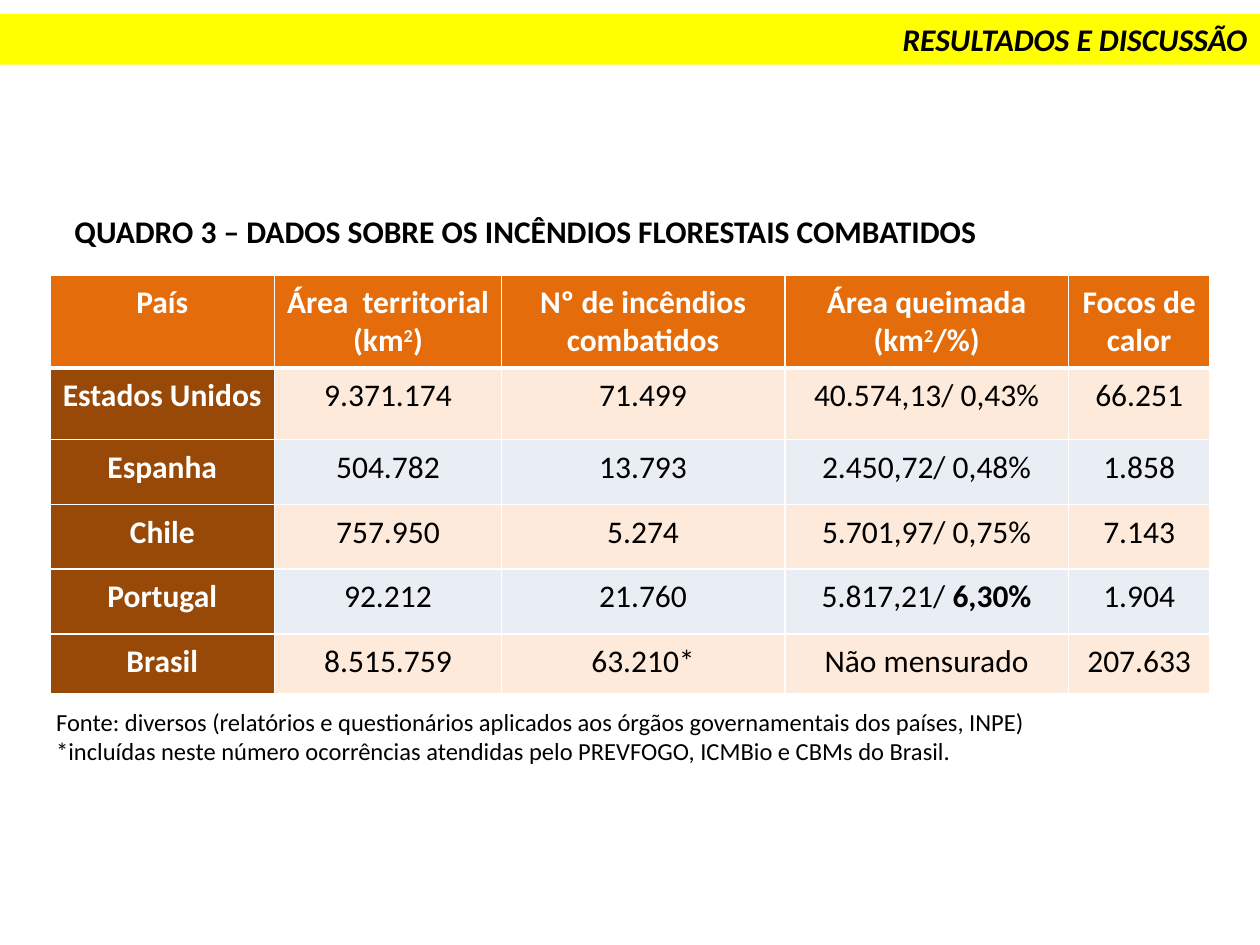
from lxml.etree import SubElement
from pptx import Presentation
from pptx.dml.color import RGBColor
from pptx.enum.text import MSO_ANCHOR, MSO_AUTO_SIZE, PP_ALIGN
from pptx.oxml.ns import qn
from pptx.util import Pt

FONT = "Calibri"
BLACK, WHITE, YELLOW = "000000", "FFFFFF", "FFFF00"
ORANGE, BROWN = "E46C0A", "984807"
BANDS = ["FDEADA", "E9EDF4"]

SECTION = "RESULTADOS E DISCUSSÃO"
CAPTION = "QUADRO 3 – DADOS SOBRE OS INCÊNDIOS FLORESTAIS COMBATIDOS"
SOURCES = [
    "Fonte: diversos (relatórios e questionários aplicados aos órgãos governamentais dos países, INPE)",
    "*incluídas neste número ocorrências atendidas pelo PREVFOGO, ICMBio e CBMs do Brasil.",
]
# A cell is a string, or a list of (text, style) pieces.
HEADER = [
    "País",
    [("Área  territorial (km", ""), ("2", "super"), (")", "")],
    "Nº de incêndios combatidos",
    [("Área queimada (km", ""), ("2", "super"), ("/%)", "")],
    "Focos de calor",
]
COUNTRIES = [
    ["Estados Unidos", "9.371.174", "71.499", "40.574,13/ 0,43%", "66.251"],
    ["Espanha", "504.782", "13.793", "2.450,72/ 0,48%", "1.858"],
    ["Chile", "757.950", "5.274", "5.701,97/ 0,75%", "7.143"],
    ["Portugal", "92.212", "21.760", [("5.817,21/ ", ""), ("6,30%", "bold")], "1.904"],
    ["Brasil", "8.515.759", "63.210*", "Não mensurado", "207.633"],
]
COLUMN_WIDTHS = [128.5, 129.5, 162, 162, 81]
ROW_HEIGHTS = [52, 41, 37, 37, 37, 34]


def rgb(color):
    return RGBColor.from_string(color)


def format_run(run, size, color=BLACK, bold=False, italic=False):
    font = run.font
    font.name, font.size, font.bold, font.italic = FONT, Pt(size), bold, italic
    font.color.rgb = rgb(color)


def add_text(slide, lines, left, top, width, height, size, bold=False):
    box = slide.shapes.add_textbox(Pt(left), Pt(top), Pt(width), Pt(height))
    frame = box.text_frame
    frame.word_wrap = True
    frame.text = "\n".join(lines)
    for paragraph in frame.paragraphs:
        for run in paragraph.runs:
            format_run(run, size, bold=bold)


def set_borders(cell, widths):
    """Draw white borders; widths maps each side (L, R, T, B) to points."""
    properties = cell._tc.get_or_add_tcPr()
    for position, (side, width) in enumerate(widths.items()):
        line = properties.makeelement(qn(f"a:ln{side}"), {"w": str(Pt(width))})
        fill = SubElement(line, qn("a:solidFill"))
        SubElement(fill, qn("a:srgbClr"), val=WHITE)
        properties.insert(position, line)


def fill_cell(cell, content, fill, color, bold):
    cell.fill.solid()
    cell.fill.fore_color.rgb = rgb(fill)
    cell.margin_left = cell.margin_right = Pt(5)
    cell.margin_top = cell.margin_bottom = Pt(5)
    paragraph = cell.text_frame.paragraphs[0]
    paragraph.alignment = PP_ALIGN.CENTER
    pieces = [(content, "")] if isinstance(content, str) else content
    for text, style in pieces:
        run = paragraph.add_run()
        run.text = text
        format_run(run, 18, color, bold or style == "bold")
        if style == "super":
            run.font._element.set("baseline", "30000")


def add_banner(slide):
    banner = slide.shapes.title
    banner.left, banner.top, banner.width, banner.height = Pt(0), Pt(8), Pt(720), Pt(29)
    banner.fill.solid()
    banner.fill.fore_color.rgb = rgb(YELLOW)
    frame = banner.text_frame
    frame.text = SECTION
    frame.auto_size = MSO_AUTO_SIZE.NONE
    frame.vertical_anchor = MSO_ANCHOR.MIDDLE
    paragraph = frame.paragraphs[0]
    paragraph.alignment = PP_ALIGN.RIGHT
    format_run(paragraph.runs[0], 18, bold=True, italic=True)


def add_fire_table(slide):
    rows = [HEADER] + COUNTRIES
    table = slide.shapes.add_table(
        len(rows), len(HEADER), Pt(28.5), Pt(157),
        Pt(sum(COLUMN_WIDTHS)), Pt(sum(ROW_HEIGHTS))).table
    for column, width in zip(table.columns, COLUMN_WIDTHS):
        column.width = Pt(width)
    for row, height in zip(table.rows, ROW_HEIGHTS):
        row.height = Pt(height)
    for r, row in enumerate(rows):
        for c, content in enumerate(row):
            if r == 0:
                fill = ORANGE
            elif c == 0:
                fill = BROWN
            else:
                fill = BANDS[(r - 1) % 2]
            heading = r == 0 or c == 0
            cell = table.cell(r, c)
            fill_cell(cell, content, fill, WHITE if heading else BLACK, heading)
            set_borders(cell, {"L": 1, "R": 1, "T": 3 if r == 1 else 1, "B": 3 if r == 0 else 1})


def main():
    deck = Presentation()
    deck.slide_width, deck.slide_height = Pt(720), Pt(540)
    slide = deck.slides.add_slide(deck.slide_layouts[5])
    add_banner(slide)
    add_text(slide, [CAPTION], 35.5, 117.5, 585, 29, 18, bold=True)
    add_text(slide, SOURCES, 25, 400.5, 638, 41, 14)
    add_fire_table(slide)
    deck.save("out.pptx")


if __name__ == "__main__":
    main()
